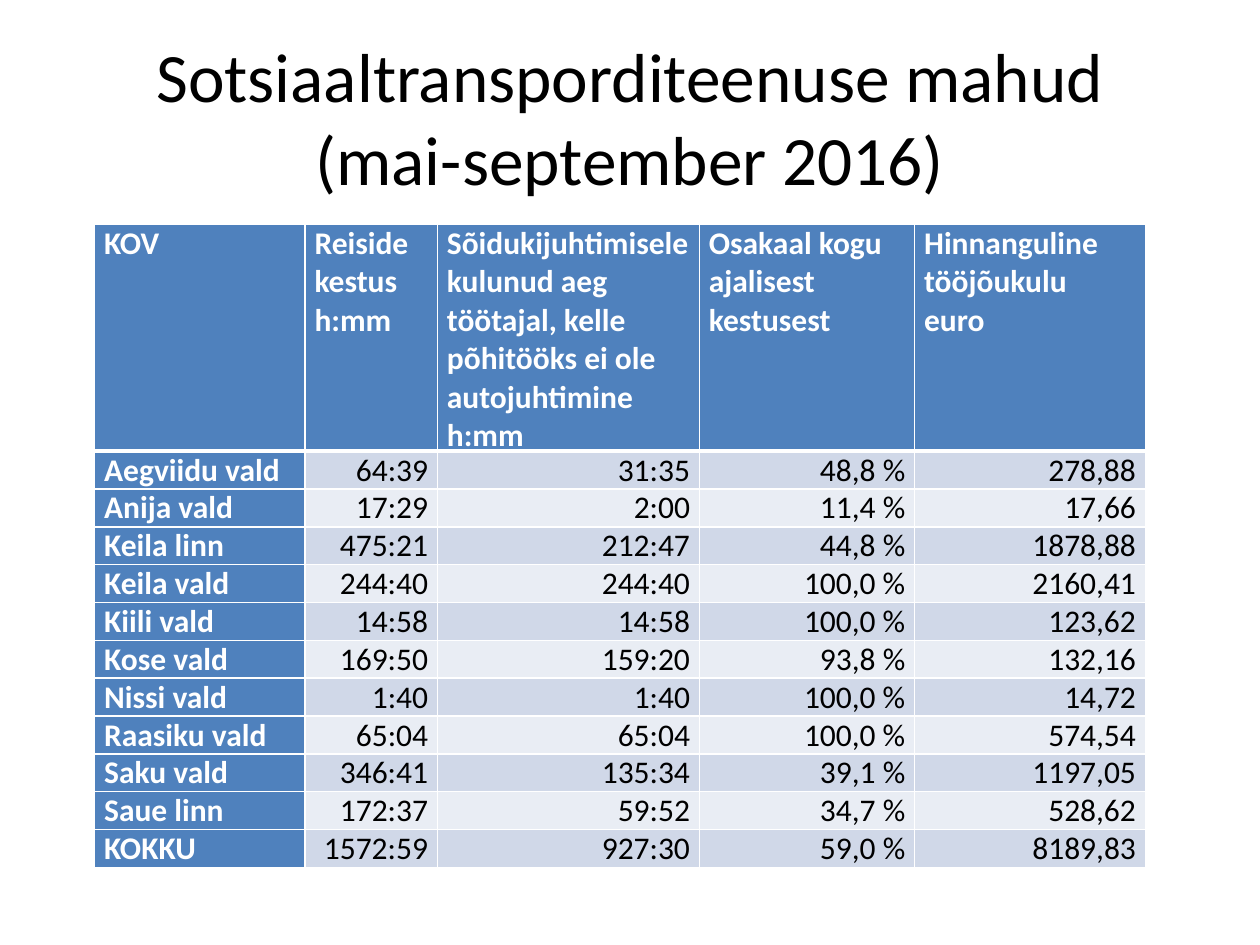
from dataclasses import dataclass

from lxml.etree import SubElement
from pptx import Presentation
from pptx.dml.color import RGBColor
from pptx.enum.text import MSO_ANCHOR, PP_ALIGN
from pptx.oxml.ns import qn
from pptx.table import _Cell
from pptx.text.text import TextFrame
from pptx.util import Cm, Pt

FONT = "Calibri"
WHITE, BLACK, BLUE = "FFFFFF", "000000", "4F81BD"
BANDS = ("D0D8E8", "E9EDF4")
TITLE = "Sotsiaaltransporditeenuse mahud (mai-september 2016)"
COLUMN_WIDTHS = (4.24, 2.67, 5.28, 4.34, 4.65)
HEADER_HEIGHT, ROW_HEIGHT, TABLE_HEIGHT = 4.24, 0.71, 12.95
HEADINGS = (
    "KOV",
    "Reiside kestus h:mm",
    "Sõidukijuhtimisele kulunud aeg töötajal, kelle põhitööks ei ole autojuhtimine\nh:mm",
    "Osakaal kogu ajalisest kestusest",
    "Hinnanguline tööjõukulu\neuro",
)


@dataclass(frozen=True)
class Municipality:
    name: str
    trip_time: str
    driving_time: str
    share: str
    labour_cost: str

    def texts(self) -> tuple[str, ...]:
        return self.name, self.trip_time, self.driving_time, self.share, self.labour_cost


@dataclass(frozen=True)
class TextStyle:
    size: float
    color: str
    bold: bool
    align: PP_ALIGN


TITLE_STYLE = TextStyle(39.6, BLACK, False, PP_ALIGN.CENTER)
HEADING_STYLE = TextStyle(18, WHITE, True, PP_ALIGN.LEFT)
VALUE_STYLE = TextStyle(18, BLACK, False, PP_ALIGN.RIGHT)

MUNICIPALITIES = (
    Municipality("Aegviidu vald", "64:39", "31:35", "48,8 %", "278,88"),
    Municipality("Anija vald", "17:29", "2:00", "11,4 %", "17,66"),
    Municipality("Keila linn", "475:21", "212:47", "44,8 %", "1878,88"),
    Municipality("Keila vald", "244:40", "244:40", "100,0 %", "2160,41"),
    Municipality("Kiili vald", "14:58", "14:58", "100,0 %", "123,62"),
    Municipality("Kose vald", "169:50", "159:20", "93,8 %", "132,16"),
    Municipality("Nissi vald", "1:40", "1:40", "100,0 %", "14,72"),
    Municipality("Raasiku vald", "65:04", "65:04", "100,0 %", "574,54"),
    Municipality("Saku vald", "346:41", "135:34", "39,1 %", "1197,05"),
    Municipality("Saue linn", "172:37", "59:52", "34,7 %", "528,62"),
    Municipality("KOKKU", "1572:59", "927:30", "59,0 %", "8189,83"),
)


def rgb(color: str) -> RGBColor:
    return RGBColor.from_string(color)


def write(frame: TextFrame, text: str, style: TextStyle) -> None:
    frame.text = text
    for para in frame.paragraphs:
        para.alignment = style.align
        for span in para.runs:
            span.font.name = FONT
            span.font.size = Pt(style.size)
            span.font.bold = style.bold
            span.font.color.rgb = rgb(style.color)


def add_borders(cell: _Cell, top: float, bottom: float) -> None:
    properties = cell._tc.get_or_add_tcPr()
    for side, width in (("L", 1), ("R", 1), ("T", top), ("B", bottom)):
        line = SubElement(properties, qn(f"a:ln{side}"), w=str(Pt(width)))
        fill = SubElement(line, qn("a:solidFill"))
        SubElement(fill, qn("a:srgbClr"), val=WHITE)


def draw_cell(cell: _Cell, text: str, row: int, column: int) -> None:
    heading = row == 0 or column == 0
    cell.margin_left = cell.margin_right = Cm(0.19)
    cell.margin_top = cell.margin_bottom = Cm(0)
    add_borders(cell, top=3 if row == 1 else 1, bottom=3 if row == 0 else 1)
    cell.fill.solid()
    cell.fill.fore_color.rgb = rgb(BLUE if heading else BANDS[(row - 1) % 2])
    write(cell.text_frame, text, HEADING_STYLE if heading else VALUE_STYLE)


def main() -> None:
    """Build the slide with transport service volumes by municipality."""
    deck = Presentation()
    deck.slide_width, deck.slide_height = Cm(25.4), Cm(19.05)
    page = deck.slides.add_slide(deck.slide_layouts[6])

    title = page.shapes.add_textbox(Cm(1.27), Cm(0.76), Cm(22.86), Cm(3.18))
    title.text_frame.word_wrap = True
    title.text_frame.vertical_anchor = MSO_ANCHOR.MIDDLE
    write(title.text_frame, TITLE, TITLE_STYLE)

    content = [HEADINGS, *(place.texts() for place in MUNICIPALITIES)]
    frame = page.shapes.add_table(
        len(content), len(HEADINGS), Cm(1.91), Cm(4.52), Cm(sum(COLUMN_WIDTHS)), Cm(TABLE_HEIGHT)
    )
    table = frame.table
    table.first_col = True
    table.horz_banding = False
    for column, width in zip(table.columns, COLUMN_WIDTHS):
        column.width = Cm(width)
    for row, texts in enumerate(content):
        table.rows[row].height = Cm(ROW_HEIGHT if row else HEADER_HEIGHT)
        for column, text in enumerate(texts):
            draw_cell(table.cell(row, column), text, row, column)
    frame.height = Cm(TABLE_HEIGHT)

    deck.save("out.pptx")


if __name__ == "__main__":
    main()
